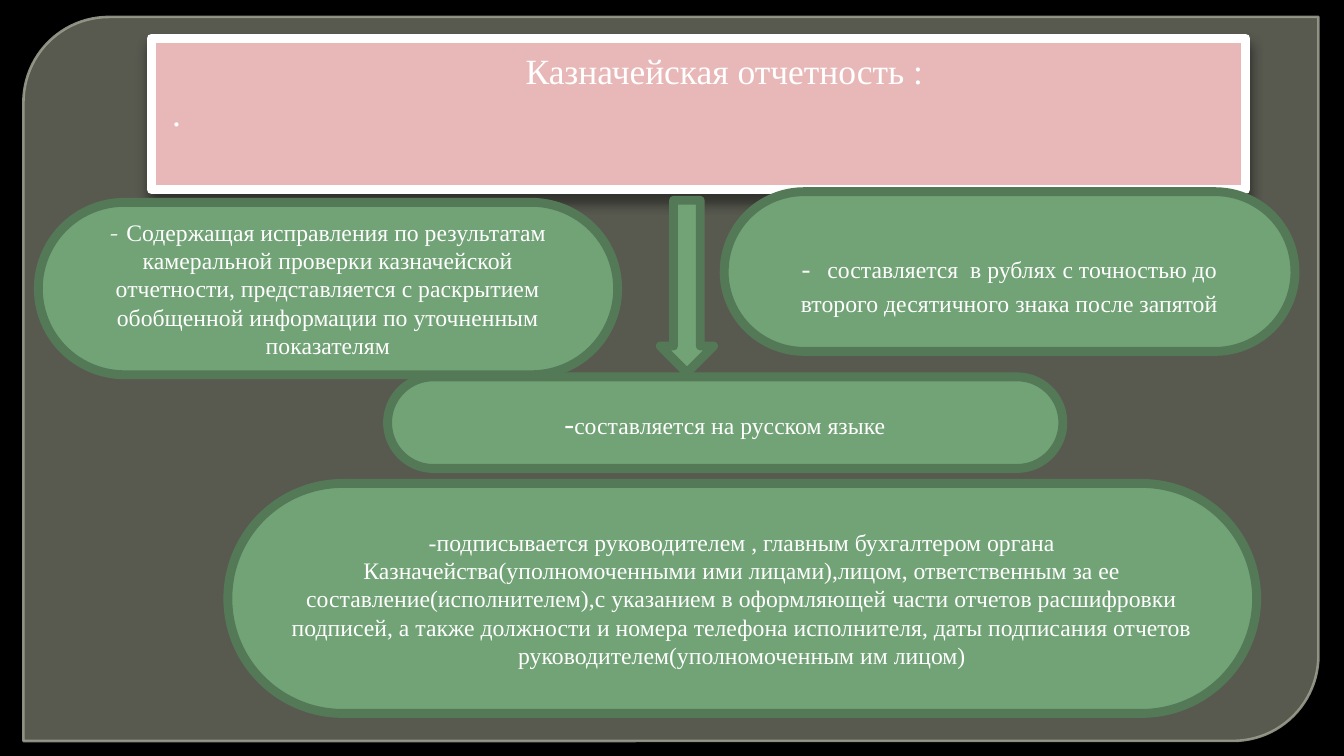
from lxml import etree
from pptx import Presentation, util as u
from pptx.dml.color import RGBColor
from pptx.enum import shapes, text
from pptx.oxml.ns import qn

# Content
TITLE = ["Казначейская отчетность :", "."]
# Each pill: place, then runs of (text, size key, font key)
PILLS = [
    ((0.18, 0.95, 2.72, 0.81), [
        ("- ", "body", "alt"),
        ("Содержащая исправления по результатам камеральной проверки "
         "казначейской отчетности, представляется с раскрытием обобщенной "
         "информации по уточненным показателям", "body", "main")]),
    ((3.4, 0.9, 2.68, 0.75), [
        ("-", "dash", "main"),
        (" ", "gap", "alt"),
        ("составляется  в рублях с точностью до второго десятичного знака "
         "после запятой", "body", "main")]),
    ((1.82, 1.77, 3.17, 0.43), [
        ("-", "mark", "main"),
        ("составляется на русском языке", "body", "main")]),
    ((1.07, 2.27, 4.83, 1.08), [
        ("-подписывается руководителем , главным бухгалтером органа "
         "Казначейства(уполномоченными ими лицами),лицом, ответственным за ее "
         "составление(исполнителем),с указанием в оформляющей части отчетов "
         "расшифровки подписей, а также должности и номера телефона "
         "исполнителя, даты подписания отчетов руководителем(уполномоченным "
         "им лицом)", "body", "main")]),
]
PANEL = (0.11, 0.08, 6.08, 3.4)
BANNER = (0.71, 0.18, 5.14, 0.71)
ARROW = (3.1, 0.94, 0.25, 0.81)
INDENT = 1.66


class Theme:
    back, panel, edge = "000000", "888B7B", "9DA090"
    pink, white = "E8B7B7", "FFFFFF"
    green, rim = "72A376", "547957"
    fonts = {"main": "Times New Roman", "alt": "TeX Gyre Bonum"}
    sizes = {"title": 12, "body": 8, "dash": 9, "mark": 10, "gap": 18}
    line = 3


def add(kind, box, fill, line, width=Theme.line):
    item = slide.shapes.add_shape(kind, *map(u.Inches, box))
    item.shadow.inherit = False
    item.fill.solid()
    item.fill.fore_color.rgb = RGBColor.from_string(fill)
    item.line.color.rgb = RGBColor.from_string(line)
    item.line.width = u.Pt(width)
    return item


def style(run, size, font):
    run.font.size = u.Pt(Theme.sizes[size])
    run.font.name = Theme.fonts[font]
    run.font.color.rgb = RGBColor.from_string(Theme.white)


def fade(color, part):
    etree.SubElement(color, qn("a:alpha"), val=str(part * 1000))


def shade(item):
    effects = item._element.spPr.find(qn("a:effectLst"))
    outer = etree.SubElement(
        effects, qn("a:outerShdw"), blurRad=str(u.Pt(4)), dist=str(u.Pt(3)),
        dir="5400000", algn="t", rotWithShape="0")
    fade(etree.SubElement(outer, qn("a:srgbClr"), val=Theme.back), 43)


# Slide and background
deck = Presentation()
deck.slide_width, deck.slide_height = u.Inches(6.31), u.Inches(3.55)
slide = deck.slides.add_slide(deck.slide_layouts[6])
slide.background.fill.solid()
slide.background.fill.fore_color.rgb = RGBColor.from_string(Theme.back)

# Translucent panel
kinds = shapes.MSO_SHAPE
panel = add(kinds.ROUND_2_DIAG_RECTANGLE, PANEL, Theme.panel, Theme.edge, 0.87)
panel.adjustments[0] = 0.118
for color, part in zip(panel._element.spPr.iter(qn("a:srgbClr")), (65, 88)):
    fade(color, part)

# Title banner
banner = add(kinds.RECTANGLE, BANNER, Theme.pink, Theme.white)
shade(banner)
frame = banner.text_frame
frame.text = "\n".join(TITLE)
frame.word_wrap = True
frame.vertical_anchor = text.MSO_ANCHOR.TOP
for para in frame.paragraphs:
    para.alignment = text.PP_ALIGN.LEFT
    style(para.runs[0], "title", "main")
frame.paragraphs[0]._p.get_or_add_pPr().set("indent", str(u.Inches(INDENT)))

# Green pills
for box, runs in PILLS:
    pill = add(kinds.ROUNDED_RECTANGLE, box, Theme.green, Theme.rim)
    pill.adjustments[0] = 0.5
    frame = pill.text_frame
    frame.word_wrap = True
    frame.vertical_anchor = text.MSO_ANCHOR.MIDDLE
    para = frame.paragraphs[0]
    para.alignment = text.PP_ALIGN.CENTER
    for words, size, font in runs:
        run = para.add_run()
        run.text = words
        style(run, size, font)

# Arrow from the title to the middle pill
add(kinds.DOWN_ARROW, ARROW, Theme.green, Theme.rim)

deck.save("out.pptx")
